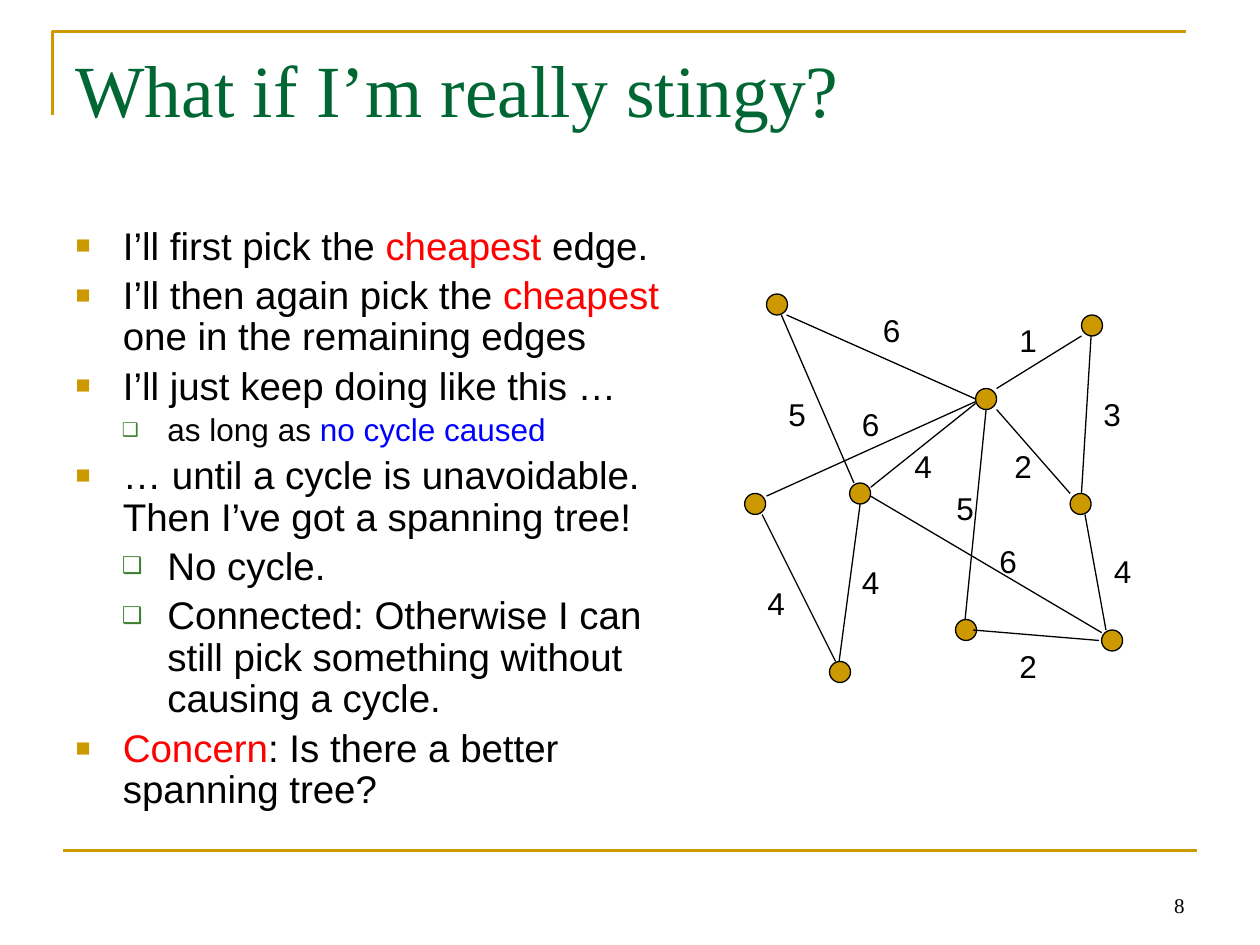
"""Build a slide on greedily picking cheap edges for a spanning tree."""
from lxml.etree import SubElement
from pptx import Presentation
from pptx.dml.color import RGBColor
from pptx.enum.shapes import MSO_CONNECTOR, MSO_SHAPE
from pptx.enum.text import MSO_ANCHOR, MSO_AUTO_SIZE, PP_ALIGN
from pptx.oxml.ns import qn
from pptx.util import Pt

GOLD, GREEN, BLACK, RED, BLUE = "CC9900", "006633", "000000", "FF0000", "0000FF"
BULLETS = [("■", GOLD, 65, 27, -27), ("❑", "3B812F", 60, 52.5, -26)]
BODY = [
    (0, 22, [("I’ll first pick the ", BLACK), ("cheapest", RED), (" edge.", BLACK)]),
    (0, 22, [("I’ll then again pick the ", BLACK), ("cheapest", RED),
             (" one in the remaining edges", BLACK)]),
    (0, 22, [("I’ll just keep doing like this …", BLACK)]),
    (1, 18, [("as long as ", BLACK), ("no cycle caused", BLUE)]),
    (0, 22, [("… until a cycle is unavoidable. Then I’ve got a spanning tree!", BLACK)]),
    (1, 22, [("No cycle.", BLACK)]),
    (1, 22, [("Connected: Otherwise I can still pick something without causing a cycle.",
              BLACK)]),
    (0, 22, [("Concern", RED), (": Is there a better spanning tree?", BLACK)]),
]
NODES = [(438, 168), (618, 180), (611.5, 282), (474, 378), (485.5, 276),
         (546, 354), (557.5, 222), (425.5, 282), (629.5, 360)]
EDGES = [
    (446.5, 180, 488, 276), (491.5, 288, 479.5, 378), (435.5, 294, 477.5, 378),
    (551.5, 354, 563.5, 234), (569.5, 222, 618, 192), (569.5, 234, 611.5, 282),
    (556, 360, 628, 366), (497.5, 283.5, 629.5, 361.5), (497.5, 278.5, 557.5, 230.5),
    (618, 282, 623.5, 192), (620, 294, 632, 360), (438, 283.5, 557.5, 229.5),
    (449.5, 180, 557.5, 228),
]
WEIGHTS = [
    ("6", 497.5, 174), ("1", 575.5, 180), ("5", 443.5, 222), ("4", 431.5, 330),
    ("6", 564, 306), ("5", 539.5, 276), ("4", 515.5, 252), ("2", 575.5, 366),
    ("4", 629.5, 312), ("3", 623.5, 222), ("4", 485.5, 318), ("2", 572.5, 252),
    ("6", 485.5, 228),
]


def rgb(color):
    return RGBColor.from_string(color)


def apply(obj, **values):
    for name, value in values.items():
        setattr(obj, name, value)


class Deck:
    def __init__(self):
        self.prs = Presentation()
        apply(self.prs, slide_width=Pt(720), slide_height=Pt(540))
        self.s = self.prs.slides.add_slide(self.prs.slide_layouts[1])

    def stroke(self, sp, color, width):
        sp.line.color.rgb = rgb(color)
        sp.line.width = Pt(width)

    def run(self, p, text, size, color=BLACK, font="Arial"):
        r = p.add_run()
        r.text = text
        apply(r.font, size=Pt(size), name=font)
        r.font.color.rgb = rgb(color)

    def placeholder(self, idx, x, y, w, h):
        sp = self.s.placeholders[idx]
        apply(sp, left=Pt(x), top=Pt(y), width=Pt(w), height=Pt(h))
        apply(sp.text_frame, word_wrap=True, auto_size=MSO_AUTO_SIZE.NONE,
              vertical_anchor=MSO_ANCHOR.TOP)
        return sp.text_frame

    def title(self, text, *box):
        p = self.placeholder(0, *box).paragraphs[0]
        p.alignment = PP_ALIGN.LEFT
        self.run(p, text, 42, GREEN, "Times New Roman")

    def bullet(self, p, level):
        char, color, percent, margin, indent = BULLETS[level]
        apply(p, level=level, line_spacing=0.9)
        pPr = p._p.get_or_add_pPr()
        pPr.set("marL", str(Pt(margin)))
        pPr.set("indent", str(Pt(indent)))
        SubElement(SubElement(pPr, qn("a:buClr")), qn("a:srgbClr"), val=color)
        SubElement(pPr, qn("a:buSzPct"), val=str(percent * 1000))
        SubElement(pPr, qn("a:buChar"), char=char)

    def body(self, items, *box):
        tf = self.placeholder(1, *box)
        for i, (level, size, runs) in enumerate(items):
            p = tf.add_paragraph() if i else tf.paragraphs[0]
            self.bullet(p, level)
            for text, color in runs:
                self.run(p, text, size, color)

    def line(self, x1, y1, x2, y2, color=BLACK, width=0.75):
        sp = self.s.shapes.add_connector(
            MSO_CONNECTOR.STRAIGHT, Pt(x1), Pt(y1), Pt(x2), Pt(y2))
        self.stroke(sp, color, width)
        SubElement(sp._element.spPr, qn("a:effectLst"))

    def corner(self, start, *points):
        builder = self.s.shapes.build_freeform(*start, scale=Pt(1))
        builder.add_line_segments(points, close=False)
        sp = builder.convert_to_shape()
        sp.shadow.inherit = False
        sp.fill.background()
        self.stroke(sp, GOLD, 1.5)

    def node(self, x, y):
        sp = self.s.shapes.add_shape(MSO_SHAPE.OVAL, Pt(x), Pt(y), Pt(12), Pt(12))
        sp.shadow.inherit = False
        sp.fill.solid()
        sp.fill.fore_color.rgb = rgb(GOLD)
        self.stroke(sp, BLACK, 0.75)

    def text(self, text, x, y, w=24.5, h=29, size=18, font="Arial",
             align=PP_ALIGN.LEFT, **frame):
        tf = self.s.shapes.add_textbox(Pt(x), Pt(y), Pt(w), Pt(h)).text_frame
        apply(tf, **frame)
        p = tf.paragraphs[0]
        p.alignment = align
        self.run(p, text, size, font=font)


def main():
    deck = Deck()
    deck.corner((30, 66), (30, 18), (678, 18))
    deck.line(36, 486, 684, 486, GOLD, 1.5)
    deck.title("What if I’m really stingy?", 36, 21.5, 648, 90)
    deck.body(BODY, 36, 126, 366, 356.5)
    for node in NODES:
        deck.node(*node)
    for edge in EDGES:
        deck.line(*edge)
    for weight in WEIGHTS:
        deck.text(*weight, word_wrap=False, auto_size=MSO_AUTO_SIZE.SHAPE_TO_FIT_TEXT)
    deck.text("8", 516, 492, 168, 36, 12, "Times New Roman", PP_ALIGN.RIGHT,
              word_wrap=True, vertical_anchor=MSO_ANCHOR.BOTTOM)
    deck.prs.save("out.pptx")


if __name__ == "__main__":
    main()
